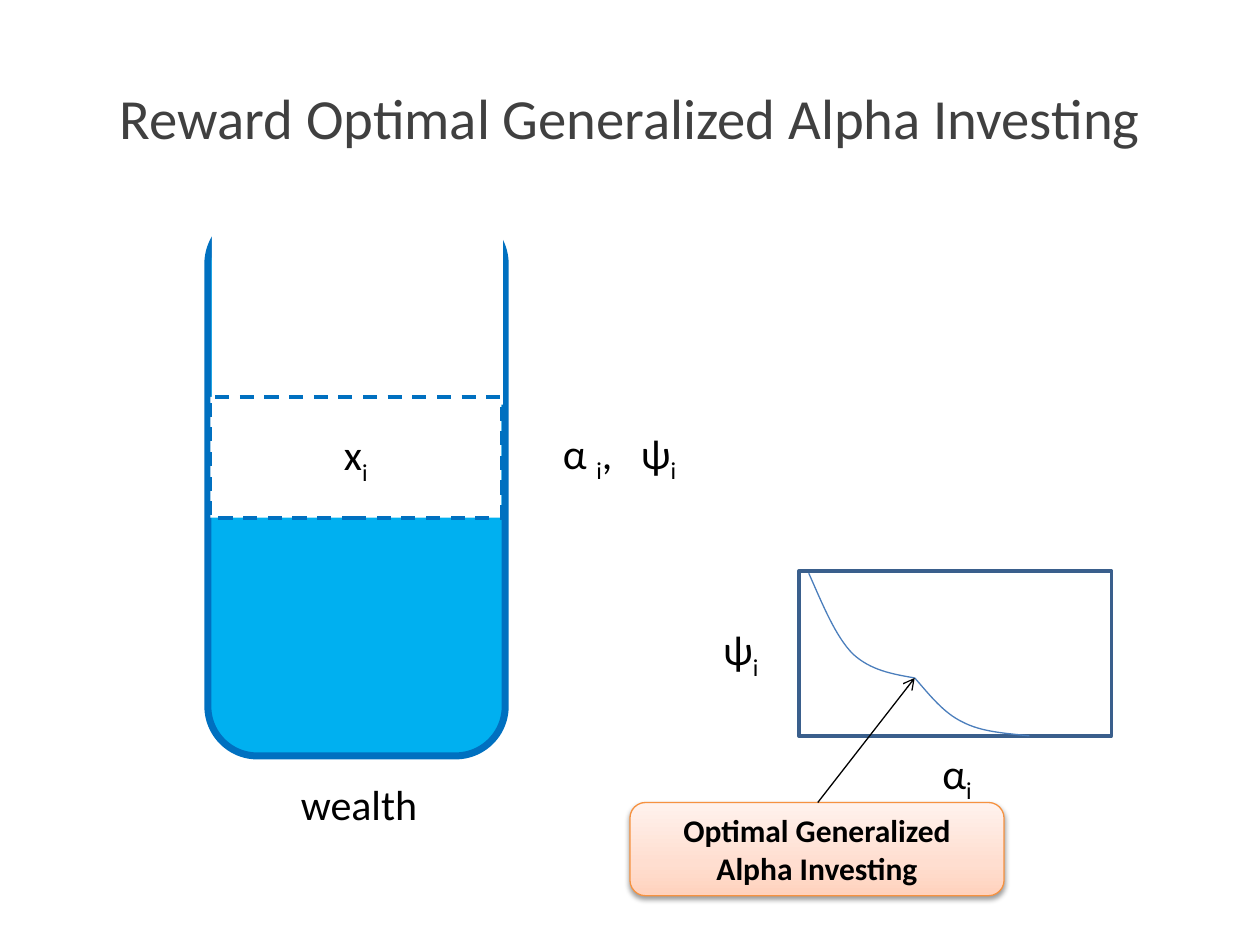
from itertools import chain

from lxml import etree
from pptx import Presentation
from pptx.dml import color as dml_color
from pptx.enum import dml, shapes, text
from pptx.oxml import parse_xml
from pptx.oxml.ns import nsdecls, qn
from pptx.util import Pt

FONT = "Calibri"
COLORS = {
    "title": "404040", "text": "000000", "paper": "FFFFFF",
    "water": "00B0F0", "glass": "0070C0",
    "frame": "3A5F8C", "curve": "4B7EBC",
    "callout_edge": "F69240", "callout_low": "FFD2BD",
    "callout_mid": "FFDED0", "callout_high": "FFF2ED",
}
BOX = shapes.MSO_SHAPE.RECTANGLE
ROUNDED = shapes.MSO_SHAPE.ROUNDED_RECTANGLE
CENTER = text.PP_ALIGN.CENTER


def rgb(name):
    return dml_color.RGBColor.from_string(COLORS[name])


def points(*values):
    return [Pt(value) for value in values]


def add_run(para, words, size=24, color="text", bold=False):
    span = para.add_run()
    span.text = words
    span.font.name = FONT
    span.font.size = Pt(size)
    span.font.bold = bold
    span.font.color.rgb = rgb(color)
    return span


def add_symbol(para, letter):
    """Write a letter followed by a lowered index i."""
    add_run(para, letter)
    add_run(para, "i").font._element.set("baseline", "-25000")


def set_line(shape, color, width):
    shape.line.color.rgb = rgb(color)
    shape.line.width = Pt(width)


def add_box(parent, kind, bounds, fill=None, line=None, width=2):
    box = parent.add_shape(kind, *points(*bounds))
    box.shadow.inherit = False
    if fill:
        box.fill.solid()
        box.fill.fore_color.rgb = rgb(fill)
    else:
        box.fill.background()
    if line:
        set_line(box, line, width)
    else:
        box.line.fill.background()
    return box


def center_para(box):
    box.text_frame.word_wrap = True
    box.text_frame.vertical_anchor = text.MSO_ANCHOR.MIDDLE
    para = box.text_frame.paragraphs[0]
    para.alignment = CENTER
    return para


def add_label(slide, bounds):
    """Add an unwrapped text box and return its paragraph."""
    frame = slide.shapes.add_textbox(*points(*bounds)).text_frame
    frame.word_wrap = False
    frame.auto_size = text.MSO_AUTO_SIZE.SHAPE_TO_FIT_TEXT
    return frame.paragraphs[0]


def add_curve(parent, start, controls):
    """Draw cubic segments, each given by two handles and an end point."""
    builder = parent.build_freeform(*points(*start))
    builder.add_line_segments([points(*point) for point in controls], close=False)
    curve = builder.convert_to_shape()
    steps = list(curve._element.iter(qn("a:lnTo")))
    for first in range(0, len(steps), 3):
        segment = steps[first:first + 3]
        bend = etree.Element(qn("a:cubicBezTo"))
        segment[0].addprevious(bend)
        for step in segment:
            bend.append(step[0])
            step.getparent().remove(step)
    curve.fill.background()
    curve.shadow.inherit = False
    set_line(curve, "curve", 0.75)


def add_arrow(slide, start, end):
    arrow = slide.shapes.add_connector(
        shapes.MSO_CONNECTOR.STRAIGHT, *points(*chain(start, end)))
    set_line(arrow, "text", 0.75)
    etree.SubElement(arrow.line._get_or_add_ln(), qn("a:tailEnd"), type="arrow")
    etree.SubElement(arrow._element.spPr, qn("a:effectLst"))


def style_callout(box):
    """Give the callout its upward gradient and soft shadow."""
    stops = ((0, "callout_low"), (35, "callout_mid"), (100, "callout_high"))
    stop_xml = "".join(
        f'<a:gs pos="{place * 1000}"><a:srgbClr val="{COLORS[name]}"/></a:gs>'
        for place, name in stops)
    gradient = parse_xml(
        f'<a:gradFill {nsdecls("a")} rotWithShape="1"><a:gsLst>{stop_xml}</a:gsLst>'
        '<a:lin ang="16200000" scaled="0"/></a:gradFill>')
    properties = box._element.spPr
    properties.replace(properties.find(qn("a:noFill")), gradient)
    properties.find(qn("a:effectLst")).append(parse_xml(
        f'<a:outerShdw {nsdecls("a")} blurRad="{Pt(3.1)}" dist="{Pt(1.6)}" '
        f'dir="5400000" rotWithShape="0"><a:srgbClr val="{COLORS["text"]}">'
        '<a:alpha val="38000"/></a:srgbClr></a:outerShdw>'))


def add_title(slide, words):
    title = slide.shapes.title
    title.left, title.top, title.width, title.height = points(36, 21.6, 648, 90)
    add_run(center_para(title), words, 32.4, "title")


def add_vessel(slide):
    add_box(slide.shapes, ROUNDED, (118.8, 122.4, 169.9, 309.6), "water", "glass", 4)
    add_box(slide.shapes, BOX, (121, 99.4, 166.3, 131.8), "paper")
    add_run(add_label(slide, (164.9, 441.4, 82.1, 36.7)), "wealth")
    stake = add_box(slide.shapes, BOX, (120.2, 226.8, 166.3, 69.1), "paper", "glass")
    stake.line.dash_style = dml.MSO_LINE.DASH
    add_symbol(center_para(stake), "x")


def add_plot(slide, knee):
    plot = slide.shapes.add_group_shape().shapes
    add_box(plot, BOX, (456.5, 326.2, 178.6, 94.3), line="frame")
    add_curve(plot, (462.2, 327.6), [
        (470.2, 345.6), (477.4, 363.6), (487.4, 373.7),
        (497.5, 383), (509.8, 385.2), knee])
    add_curve(plot, knee, [
        (531.4, 397.4), (539.3, 407.5), (550.1, 412.6),
        (560.9, 418.3), (574.6, 419), (588.2, 420.5)])


def add_callout(slide, knee):
    callout = add_box(slide.shapes, ROUNDED, (360, 458.6, 213.8, 53.3),
                      line="callout_edge", width=0.75)
    style_callout(callout)
    add_run(center_para(callout), "Optimal Generalized Alpha Investing", 18, bold=True)
    add_arrow(slide, (467.3, 458.6), knee)


def add_parameters(slide):
    para = add_label(slide, (314.6, 240.5, 80.6, 36))
    add_symbol(para, "α ")
    add_run(para, ",")
    add_run(para, " ").font._element.set("spc", "1085")
    add_symbol(para, "ψ")


def main():
    deck = Presentation()
    deck.slide_width, deck.slide_height = points(720, 540)
    slide = deck.slides.add_slide(deck.slide_layouts[5])
    knee = (522.7, 387.4)
    add_title(slide, "Reward Optimal Generalized Alpha Investing")
    add_vessel(slide)
    add_plot(slide, knee)
    add_symbol(add_label(slide, (531.4, 423.4, 31.7, 36.7)), "α")
    add_callout(slide, knee)
    add_parameters(slide)
    add_symbol(add_label(slide, (406.1, 352.8, 35.3, 36)), "ψ")
    deck.save("out.pptx")


if __name__ == "__main__":
    main()
